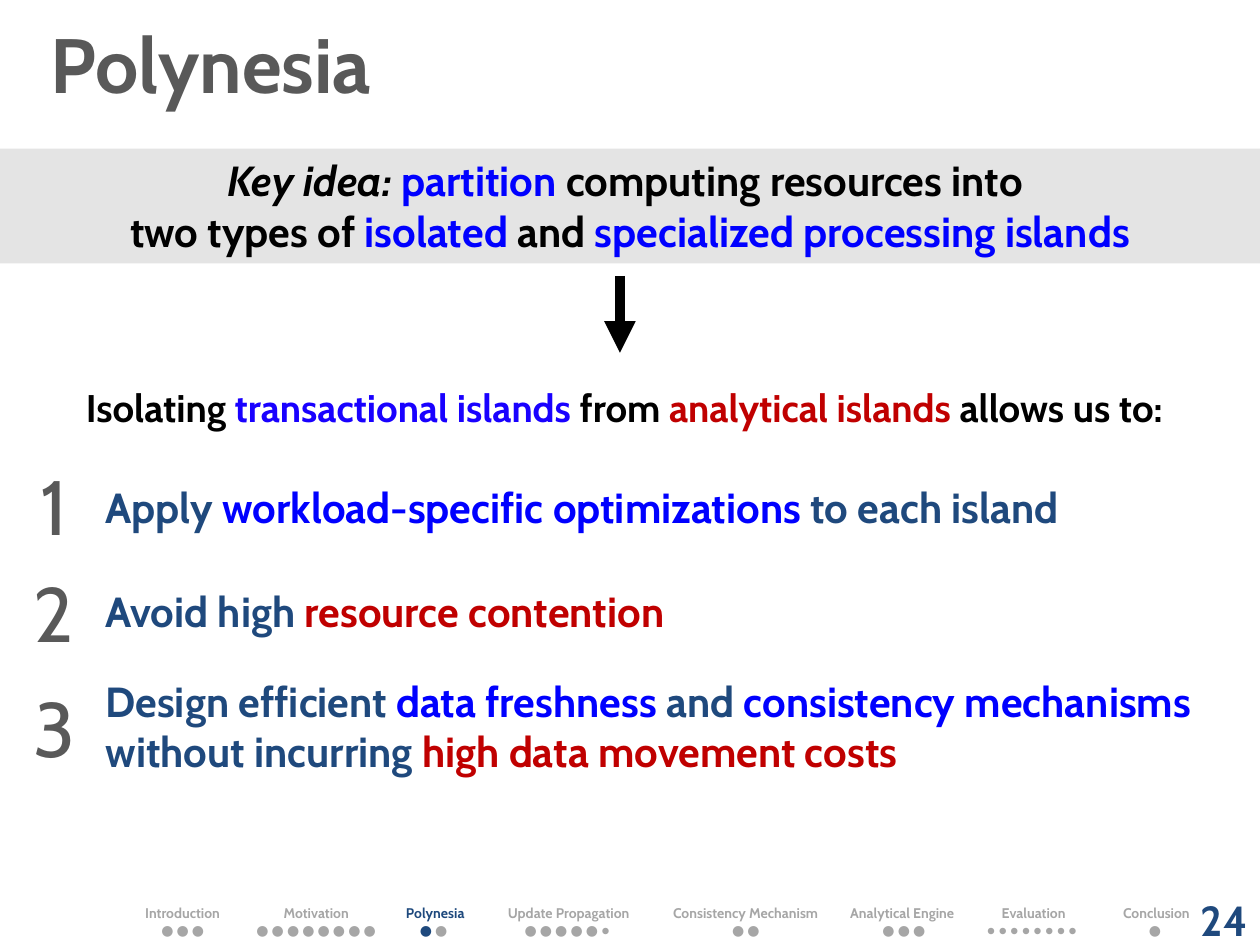
"""Build the Polynesia key idea slide with its progress bar."""
from lxml.etree import SubElement
from pptx import Presentation
from pptx.dml.color import RGBColor
from pptx.enum.shapes import MSO_CONNECTOR, MSO_SHAPE
from pptx.enum.text import MSO_ANCHOR, PP_ALIGN
from pptx.oxml.ns import qn
from pptx.util import Inches, Pt

BLACK = RGBColor(0x00, 0x00, 0x00)
BLUE = RGBColor(0x00, 0x00, 0xFF)
VIOLET = RGBColor(0x19, 0x01, 0xFF)
RED = RGBColor(0xC0, 0x00, 0x00)
NAVY = RGBColor(0x1F, 0x49, 0x7D)
CURRENT = RGBColor(0x1E, 0x49, 0x7D)
DARK_GREY = RGBColor(0x59, 0x59, 0x59)
GREY = RGBColor(0xA6, 0xA6, 0xA6)
BAND_GREY = RGBColor(0xE4, 0xE4, 0xE4)
NO_STYLE_NO_GRID = "{2D5ABB26-0587-4C30-8999-92F81FD0307C}"

presentation = Presentation()
presentation.slide_width = Inches(10)
presentation.slide_height = Inches(7.5)
column = presentation.slide_width // 100
row = presentation.slide_height // 100
slide = presentation.slides.add_slide(presentation.slide_layouts[6])


def write(paragraph, parts, size, bold=True, align=PP_ALIGN.LEFT, font="Cabin"):
    paragraph.alignment = align
    for text, color in parts:
        run = paragraph.add_run()
        run.text = text
        run.font.name = font
        run.font.size = Pt(size)
        run.font.bold = bold
        run.font.color.rgb = color


def add_text(left, top, width, height, parts, size, **style):
    shape = slide.shapes.add_textbox(
        round(left * column), round(top * row), round(width * column), round(height * row))
    shape.text_frame.word_wrap = True
    write(shape.text_frame.paragraphs[0], parts, size, **style)
    return shape.text_frame


band = slide.shapes.add_shape(
    MSO_SHAPE.RECTANGLE, 0, round(15.73 * row), 100 * column, round(12.13 * row))
band.shadow.inherit = False
band.fill.solid()
band.fill.fore_color.rgb = BAND_GREY
band.line.fill.background()
band.text_frame.word_wrap = True
band.text_frame.vertical_anchor = MSO_ANCHOR.TOP
key_idea = band.text_frame.paragraphs[0]
write(key_idea, [("Key idea: ", BLACK), ("partition ", BLUE),
                 ("computing resources into ", BLACK)], 24, align=PP_ALIGN.CENTER)
key_idea.runs[0].font.italic = True
write(band.text_frame.add_paragraph(),
      [("two types of ", BLACK), ("isolated", BLUE), (" and ", BLACK),
       ("specialized processing islands", BLUE)], 24, align=PP_ALIGN.CENTER)

arrow = slide.shapes.add_connector(
    MSO_CONNECTOR.STRAIGHT, round(49.2 * column), round(29.2 * row),
    round(49.2 * column), round(37.33 * row))
arrow.line.color.rgb = BLACK
arrow.line.width = Pt(6)
SubElement(arrow.line._get_or_add_ln(), qn("a:tailEnd"), type="triangle")
SubElement(arrow._element.spPr, qn("a:effectLst"))

add_text(0.8, 40, 97.5, 6.27,
         [("Isolating ", BLACK), ("transactional islands ", VIOLET), ("from ", BLACK),
          ("analytical islands ", RED), ("allows us to:", BLACK)],
         22, align=PP_ALIGN.CENTER)

benefits = [
    (50.27, 6.67, 47.87, [("Apply ", NAVY), ("workload-specific optimizations ", BLUE),
                          ("to each island", NAVY)]),
    (61.33, 6.67, 59.2, [("Avoid high ", NAVY), ("resource contention", RED)]),
    (70.8, 12.13, 71.33, [("Design efficient ", NAVY), ("data freshness ", BLUE),
                          ("and", NAVY), (" consistency mechanisms ", BLUE),
                          ("without incurring ", NAVY),
                          ("high data movement costs", RED)]),
]
for number, (top, height, number_top, parts) in enumerate(benefits, 1):
    add_text(7.4, top, 94.3 - 1.7, height, parts, 24)
    add_text(1.7, number_top, 5.2, 11.2, [(str(number), DARK_GREY)], 44, bold=False,
             align=PP_ALIGN.CENTER if number == 1 else PP_ALIGN.LEFT)

title = add_text(0, 0, 100, 13.33, [("Polynesia", DARK_GREY)], 44)
title.vertical_anchor = MSO_ANCHOR.MIDDLE
title.margin_left = 4 * column

sections = [
    ("Introduction", 9.8, [("● ● ●", GREY)], "Cabin"),
    ("Motivation", 11.4, [("● ● ● ● ● ● ● ●", GREY)], "Cabin"),
    ("Polynesia", 7.5, [("●", CURRENT), (" ● ", GREY)], "Cabin"),
    ("Update Propagation", 13.7, [("● ● ● ● ●", GREY), (" ● ", GREY)], "Cabin"),
    ("Consistency Mechanism", 14.4, [("● ●", GREY)], "Cabin"),
    ("Analytical Engine ", 10.7, [("● ● ●", GREY)], "Cabin"),
    ("Evaluation", 9.9, [("● ● ● ● ● ● ● ● ", GREY)], "Calibri"),
    ("Conclusion", 9.6, [("● ", GREY)], "Cabin"),
]
progress = slide.shapes.add_table(
    2, len(sections), round(9.6 * column), round(95.73 * row),
    87 * column, round(3.6 * row)).table
progress.first_row = False
progress.horz_banding = False
progress._tbl.tblPr.find(qn("a:tableStyleId")).text = NO_STYLE_NO_GRID
for index, (name, width, dots, font) in enumerate(sections):
    progress.columns[index].width = round(width * column)
    name_color = CURRENT if name == "Polynesia" else GREY
    for line, parts in enumerate([[(name, name_color)], dots]):
        cell = progress.cell(line, index)
        cell.fill.background()
        cell.margin_left = cell.margin_right = cell.margin_top = cell.margin_bottom = 0
        write(cell.text_frame.paragraphs[0], parts, 8, bold=line == 0,
              align=PP_ALIGN.CENTER, font=font if line else "Cabin")
progress.cell(1, 3).text_frame.paragraphs[0].runs[1].font.name = "Calibri"

page_number = add_text(80, 94.67, 20, 5.33, [("24", NAVY)], 24, align=PP_ALIGN.RIGHT)
page_number.vertical_anchor = MSO_ANCHOR.MIDDLE

presentation.save("out.pptx")
